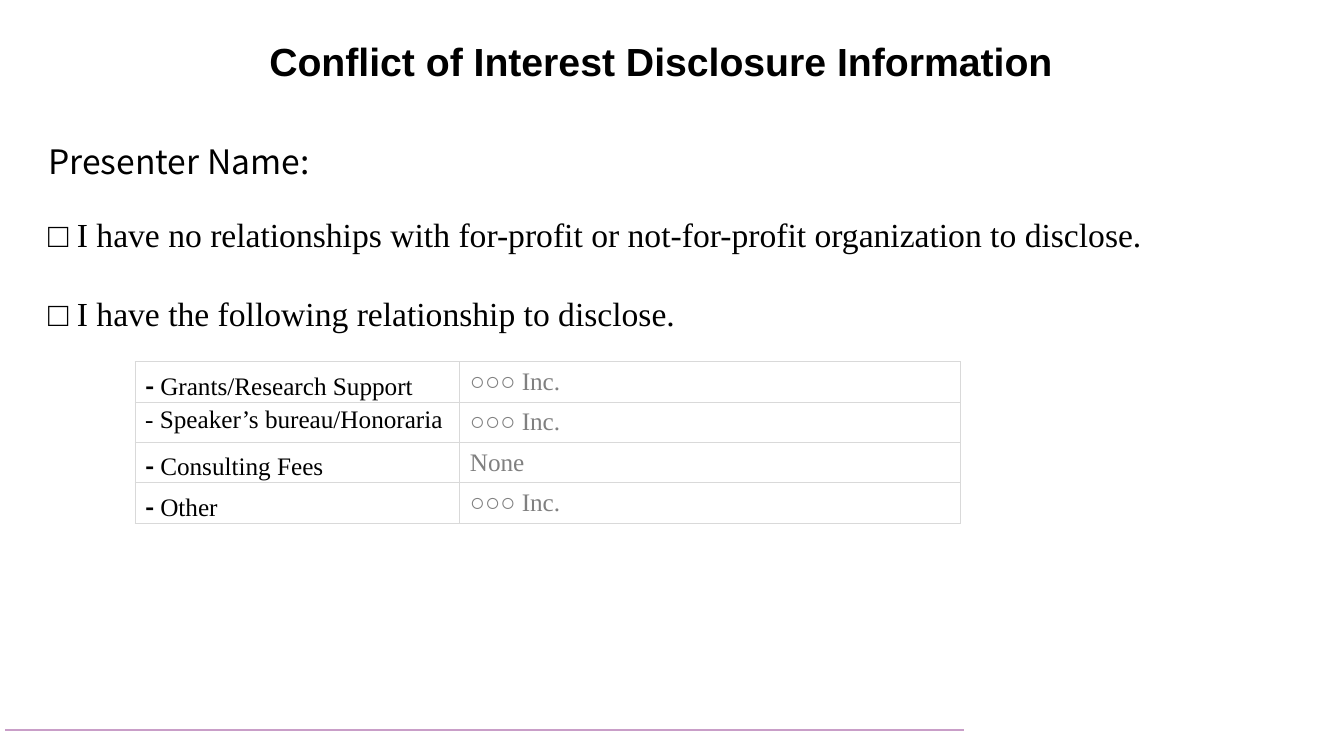
from lxml import etree
from pptx import Presentation
from pptx.dml.color import RGBColor
from pptx.enum.shapes import MSO_CONNECTOR
from pptx.enum.text import MSO_ANCHOR, PP_ALIGN
from pptx.oxml.ns import qn
from pptx.util import Pt

PX = 9144  # EMU, 100 px to the inch
STRAIGHT = MSO_CONNECTOR.STRAIGHT
CENTER, LEFT = PP_ALIGN.CENTER, PP_ALIGN.LEFT
TOP, MIDDLE = MSO_ANCHOR.TOP, MSO_ANCHOR.MIDDLE
SANS, SERIF, CJK = "Arial", "Times New Roman", "Noto Sans CJK KR"
BLACK, GRAY, BORDER, PURPLE = "000000", "808080", "D9D9D9", "C99EC8"

STATEMENTS = [
    "□ I have no relationships with for-profit or not-for-profit organization to disclose.",
    "□ I have the following relationship to disclose.",
]
# label, answer, whether the dash is bold
RELATIONSHIPS = [
    ("Grants/Research Support", "○○○ Inc.", True),
    ("Speaker’s bureau/Honoraria", "○○○ Inc.", False),
    ("Consulting Fees", "None", True),
    ("Other", "○○○ Inc.", True),
]


def px(*lengths):
    return [length * PX for length in lengths]


def color(hex_code):
    return RGBColor.from_string(hex_code)


def style(span, size, font, hex_code=BLACK, bold=False):
    span.font.size = Pt(size)
    span.font.name = font
    span.font.bold = bold
    span.font.color.rgb = color(hex_code)


def add_text(page, box, lines, size, font, bold=False, align=LEFT, gap=0):
    """Place one paragraph per line, with gap points between them."""
    frame = page.shapes.add_textbox(*px(*box)).text_frame
    frame.word_wrap = True
    frame.text = "\n".join(lines)
    for index, para in enumerate(frame.paragraphs):
        para.alignment = align
        if index:
            para.space_before = Pt(gap)
        style(para.runs[0], size, font, bold=bold)


def set_borders(cell):
    properties = cell._tc.get_or_add_tcPr()
    for position, side in enumerate(("a:lnL", "a:lnR", "a:lnT", "a:lnB")):
        line = etree.Element(qn(side), w=str(Pt(1)))
        fill = etree.SubElement(line, qn("a:solidFill"))
        etree.SubElement(fill, qn("a:srgbClr"), val=BORDER)
        properties.insert(position, line)


def fill_cell(cell, spans, anchor, bottom):
    """Write (text, font, colour, bold) spans into a bordered cell."""
    cell.fill.background()
    set_borders(cell)
    cell.vertical_anchor = anchor
    cell.margin_left, cell.margin_right = px(10, 10)
    cell.margin_top, cell.margin_bottom = px(4, bottom)
    para = cell.text_frame.paragraphs[0]
    for text, font, hex_code, bold in spans:
        span = para.add_run()
        span.text = text
        style(span, 18, font, hex_code, bold)


def add_relationship_table(page, box):
    width, label_width = box[2], 322
    table = page.shapes.add_table(len(RELATIONSHIPS), 2, *px(*box)).table
    table.first_row = table.horz_banding = False
    table.columns[0].width, table.columns[1].width = px(label_width, width - label_width)
    for row, (label, answer, bold_dash) in enumerate(RELATIONSHIPS):
        if bold_dash:
            spans = [("- ", CJK, BLACK, True), (label, SERIF, BLACK, False)]
        else:
            spans = [("- " + label, SERIF, BLACK, False)]
        fill_cell(table.cell(row, 0), spans, MIDDLE if bold_dash else TOP, 0)
        fill_cell(table.cell(row, 1), [(answer, SERIF, GRAY, False)], MIDDLE, 4)


def add_footer_line(page, left, right, y):
    line = page.shapes.add_connector(STRAIGHT, *px(left, y, right, y))
    line.line.color.rgb = color(PURPLE)
    line.line.width = Pt(1.5)
    etree.SubElement(line._element.spPr, qn("a:effectLst"))


def add_disclosure_slide(deck):
    page = deck.slides.add_slide(deck.slide_layouts[6])
    add_footer_line(page, 5, 956, 724)
    add_text(page, (231, 32, 849, 57), ["Conflict of Interest Disclosure Information"],
             28, SANS, bold=True, align=CENTER)
    add_text(page, (38, 135, 1072, 50), ["Presenter Name:"], 24, CJK)
    add_text(page, (38, 207, 1240, 131), STATEMENTS, 24, SERIF, gap=28)
    add_relationship_table(page, (134, 359, 819, 160))


def main():
    deck = Presentation()
    deck.slide_width, deck.slide_height = px(1333, 750)
    add_disclosure_slide(deck)
    deck.save("out.pptx")


if __name__ == "__main__":
    main()
